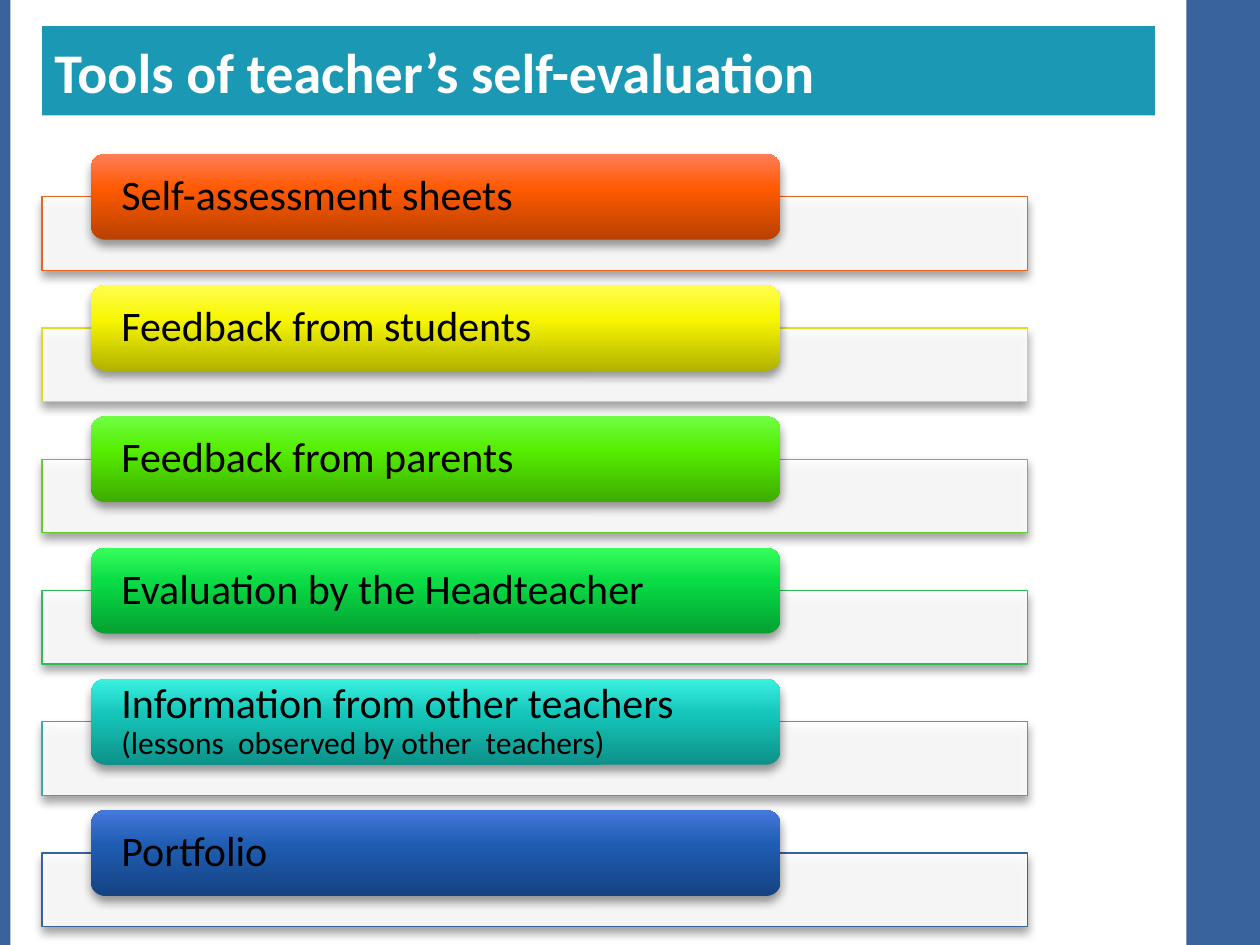
"""Build the slide listing the tools of teacher's self-evaluation."""
from lxml import etree
from pptx import Presentation
from pptx.dml.color import RGBColor
from pptx.enum.shapes import MSO_SHAPE
from pptx.enum.text import MSO_ANCHOR, PP_ALIGN
from pptx.oxml.ns import qn
from pptx.util import Pt

RECTANGLE = MSO_SHAPE.RECTANGLE
ROUNDED = MSO_SHAPE.ROUNDED_RECTANGLE
MIDDLE = MSO_ANCHOR.MIDDLE
LEFT = PP_ALIGN.LEFT

WHITE = RGBColor(0xFF, 0xFF, 0xFF)
BLACK = RGBColor(0x00, 0x00, 0x00)
NAVY = RGBColor(0x39, 0x63, 0x9D)
TEAL = RGBColor(0x1B, 0x99, 0xB4)
ORANGE = RGBColor(0xEB, 0x64, 0x1B)
YELLOW = RGBColor(0xDF, 0xDE, 0x1E)
LIME = RGBColor(0x62, 0xCD, 0x26)
GREEN = RGBColor(0x2D, 0xBC, 0x56)
AQUA = RGBColor(0x33, 0xAC, 0xA4)

FONT = "Calibri"
PITCH = 75
TOOLS = [
    ([("Self-assessment sheets", 24)], ORANGE, ("B94100", "FF5A01", "FF7D59")),
    ([("Feedback from students", 24)], YELLOW, ("B2B200", "F7F600", "FFFE4F")),
    ([("Feedback from parents", 24)], LIME, ("3DAC00", "55ED00", "6FFF42")),
    ([("Evaluation by the Headteacher", 24)], GREEN, ("04A131", "09DB45", "36FF5C")),
    ([("Information from other teachers ", 24),
      ("(lessons  observed by other  teachers)", 18)],
     AQUA, ("0D9189", "15C6BA", "39F1E1")),
    ([("Portfolio", 24)], NAVY, ("154382", "1F5DB2", "4578DB")),
]

deck = Presentation()
deck.slide_width, deck.slide_height = Pt(720), Pt(540)
page = deck.slides.add_slide(deck.slide_layouts[6])


def add_box(kind, left, top, width, height, color, shadow=False):
    box = page.shapes.add_shape(kind, Pt(left), Pt(top), Pt(width), Pt(height))
    box.fill.solid()
    box.fill.fore_color.rgb = color
    box.line.fill.background()
    box.shadow.inherit = False
    if shadow:
        effects = box.element.spPr.find(qn("a:effectLst"))
        outer = etree.SubElement(effects, qn("a:outerShdw"), blurRad=str(Pt(5.2)),
                                 dist=str(Pt(3)), dir="5400000", rotWithShape="0")
        tint = etree.SubElement(outer, qn("a:srgbClr"), val=str(BLACK))
        etree.SubElement(tint, qn("a:alpha"), val="40000")
    return box


def write(box, spans, color, bold=False):
    frame = box.text_frame
    frame.word_wrap = True
    frame.vertical_anchor = MIDDLE
    para = frame.paragraphs[0]
    para.alignment = LEFT
    for text, size in spans:
        span = para.add_run()
        span.text = text
        span.font.name = FONT
        span.font.size = Pt(size)
        span.font.bold = bold
        span.font.color.rgb = color
    return frame


add_box(RECTANGLE, 678, 0, 42, 540, NAVY)
add_box(RECTANGLE, 0, 0, 6, 540, NAVY)
title = add_box(RECTANGLE, 24, 15, 636, 51, TEAL)
write(title, [("Tools of teacher’s self-evaluation", 32)], WHITE, bold=True)

for row, (spans, outline, shades) in enumerate(TOOLS):
    top = 88 + row * PITCH
    bar = add_box(RECTANGLE, 24, top + 24.5, 563, 42, WHITE, shadow=True)
    bar.line.color.rgb = outline
    bar.line.width = Pt(0.75)
    white_fill = bar.element.spPr.find(qn("a:solidFill"))[0]
    etree.SubElement(white_fill, qn("a:alpha"), val="90000")

    label = add_box(ROUNDED, 52, top, 394, 49, WHITE, shadow=True)
    label.fill.gradient()
    label.fill.gradient_angle = 90
    stops = label.element.spPr.find(qn("a:gradFill")).find(qn("a:gsLst"))
    for stop in list(stops):
        stops.remove(stop)
    for position, shade in zip((0, 60000, 100000), shades):
        stop = etree.SubElement(stops, qn("a:gs"), pos=str(position))
        etree.SubElement(stop, qn("a:srgbClr"), val=shade)

    frame = write(label, spans, BLACK)
    frame.margin_left = frame.margin_right = Pt(15)
    frame.margin_top = frame.margin_bottom = 0
    frame.paragraphs[0].line_spacing = 0.9

deck.save("out.pptx")
